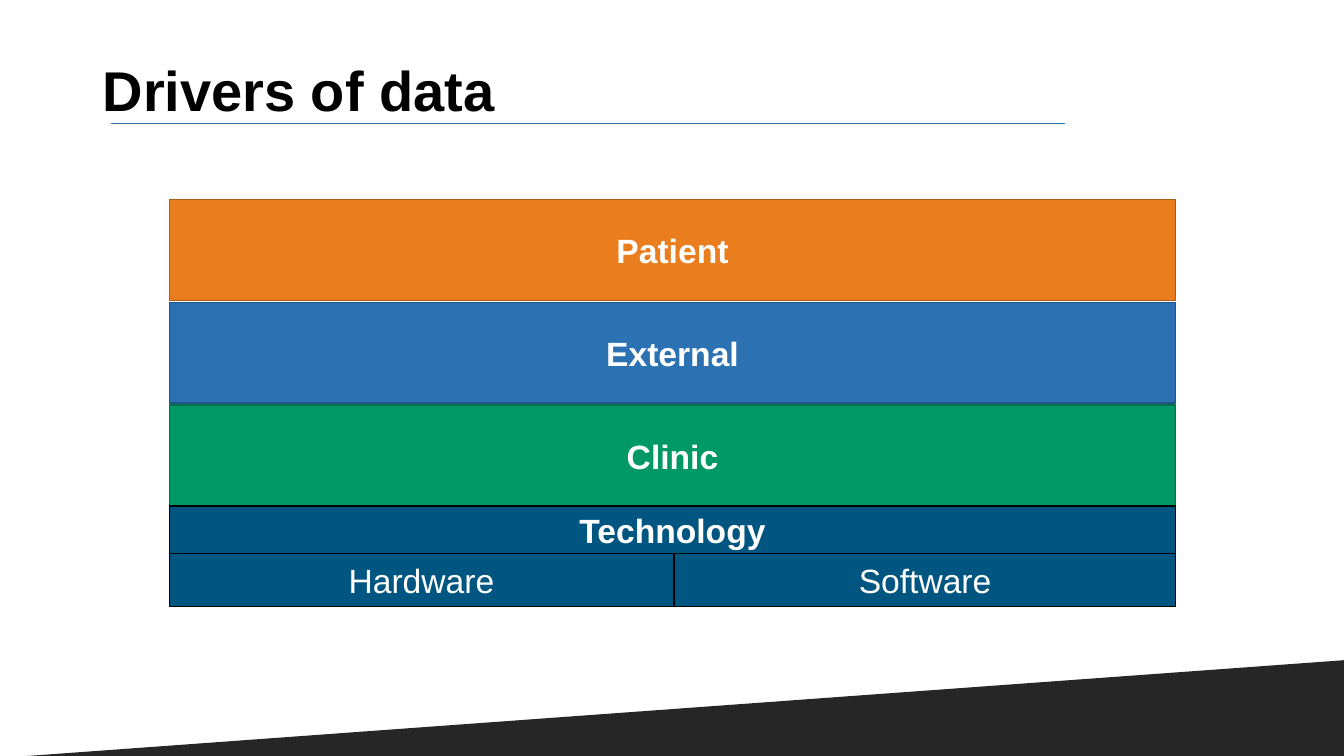
from lxml.etree import SubElement
from pptx import Presentation
from pptx.dml.color import RGBColor
from pptx.enum.shapes import MSO_CONNECTOR, MSO_SHAPE
from pptx.enum.text import MSO_ANCHOR, PP_ALIGN
from pptx.oxml.ns import qn
from pptx.util import Inches, Pt

BLACK = RGBColor(0x00, 0x00, 0x00)
WHITE = RGBColor(0xFF, 0xFF, 0xFF)
CHARCOAL = RGBColor(0x26, 0x26, 0x26)
ORANGE = RGBColor(0xEA, 0x7D, 0x1E)
DARK_ORANGE = RGBColor(0xAD, 0x5C, 0x16)
BLUE = RGBColor(0x2C, 0x72, 0xB3)
DARK_BLUE = RGBColor(0x21, 0x54, 0x84)
GREEN = RGBColor(0x00, 0x99, 0x66)
DARK_GREEN = RGBColor(0x00, 0x71, 0x4B)
PETROL = RGBColor(0x00, 0x55, 0x81)


class Deck:
    """Draws styled elements on the current slide."""

    font = "Arial"

    def __init__(self, slide):
        self.shapes = slide.shapes

    def set_text(self, sp, text, size, color, bold, align):
        tf = sp.text_frame
        tf.word_wrap = True
        tf.vertical_anchor = MSO_ANCHOR.MIDDLE
        p = tf.paragraphs[0]
        p.text = text
        p.alignment = align
        f = p.runs[0].font
        f.name, f.size, f.bold = self.font, Pt(size), bold
        f.color.rgb = color
        return p

    def title(self, text, x, y, w, h):
        sp = self.shapes.add_textbox(Inches(x), Inches(y), Inches(w), Inches(h))
        p = self.set_text(sp, text, 40, BLACK, True, PP_ALIGN.LEFT)
        p.line_spacing = 0.9

    def wedge(self, x, y, w, h):
        sp = self.shapes.add_shape(MSO_SHAPE.RIGHT_TRIANGLE, Inches(x), Inches(y), Inches(w), Inches(h))
        sp.shadow.inherit = False
        sp.fill.solid()
        sp.fill.fore_color.rgb = CHARCOAL
        sp.line.fill.background()
        sp._element.spPr.xfrm.set("flipH", "1")

    def rule(self, x1, x2, y):
        line = self.shapes.add_connector(MSO_CONNECTOR.STRAIGHT, Inches(x1), Inches(y), Inches(x2), Inches(y))
        line.line.color.rgb = BLUE
        line.line.width = Pt(0.5)
        effects = SubElement(line._element.spPr, qn("a:effectLst"))
        shadow = SubElement(effects, qn("a:outerShdw"), blurRad=str(Pt(4)), dist=str(Pt(3)),
                            dir="2700000", algn="tl", rotWithShape="0")
        color = SubElement(shadow, qn("a:srgbClr"), val=str(BLACK))
        SubElement(color, qn("a:alpha"), val="40000")

    def block(self, text, x, y, w, h, fill, border, bold=True):
        sp = self.shapes.add_shape(MSO_SHAPE.RECTANGLE, Inches(x), Inches(y), Inches(w), Inches(h))
        sp.shadow.inherit = False
        sp.fill.solid()
        sp.fill.fore_color.rgb = fill
        sp.line.color.rgb = border
        sp.line.width = Pt(1)
        self.set_text(sp, text, 24, WHITE, bold, PP_ALIGN.CENTER)


def main():
    prs = Presentation()
    prs.slide_width, prs.slide_height = Inches(13.33), Inches(7.5)
    s = Deck(prs.slides.add_slide(prs.slide_layouts[6]))

    s.wedge(0, 6.55, 13.33, 0.97)
    s.rule(1.1, 10.56, 1.22)
    s.title("Drivers of data", 0.92, 0.52, 11.5, 0.81)

    left, width, top, pitch = 1.68, 9.98, 1.98, 1.02
    s.block("Clinic", left, top + 2 * pitch, width, 1, GREEN, DARK_GREEN)
    s.block("Technology", left, 5.02, width, 0.47, PETROL, BLACK)
    for text, x, w in (("Hardware", left, 5), ("Software", 6.69, 4.97)):
        s.block(text, x, 5.49, w, 0.53, PETROL, BLACK, bold=False)
    s.block("External", left, top + pitch, width, 1, BLUE, DARK_BLUE)
    s.block("Patient", left, top, width, 1, ORANGE, DARK_ORANGE)

    prs.save("out.pptx")


if __name__ == "__main__":
    main()
